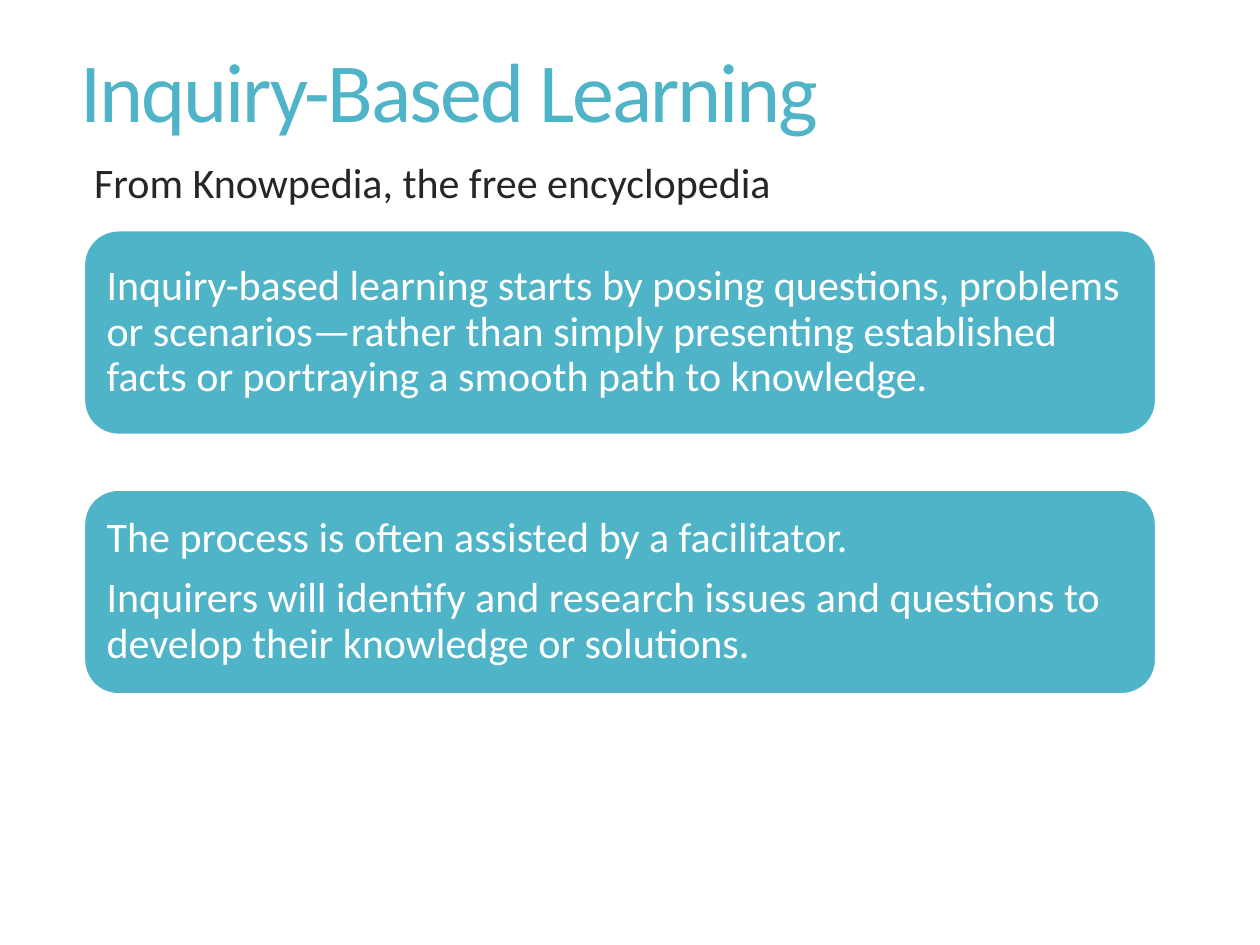
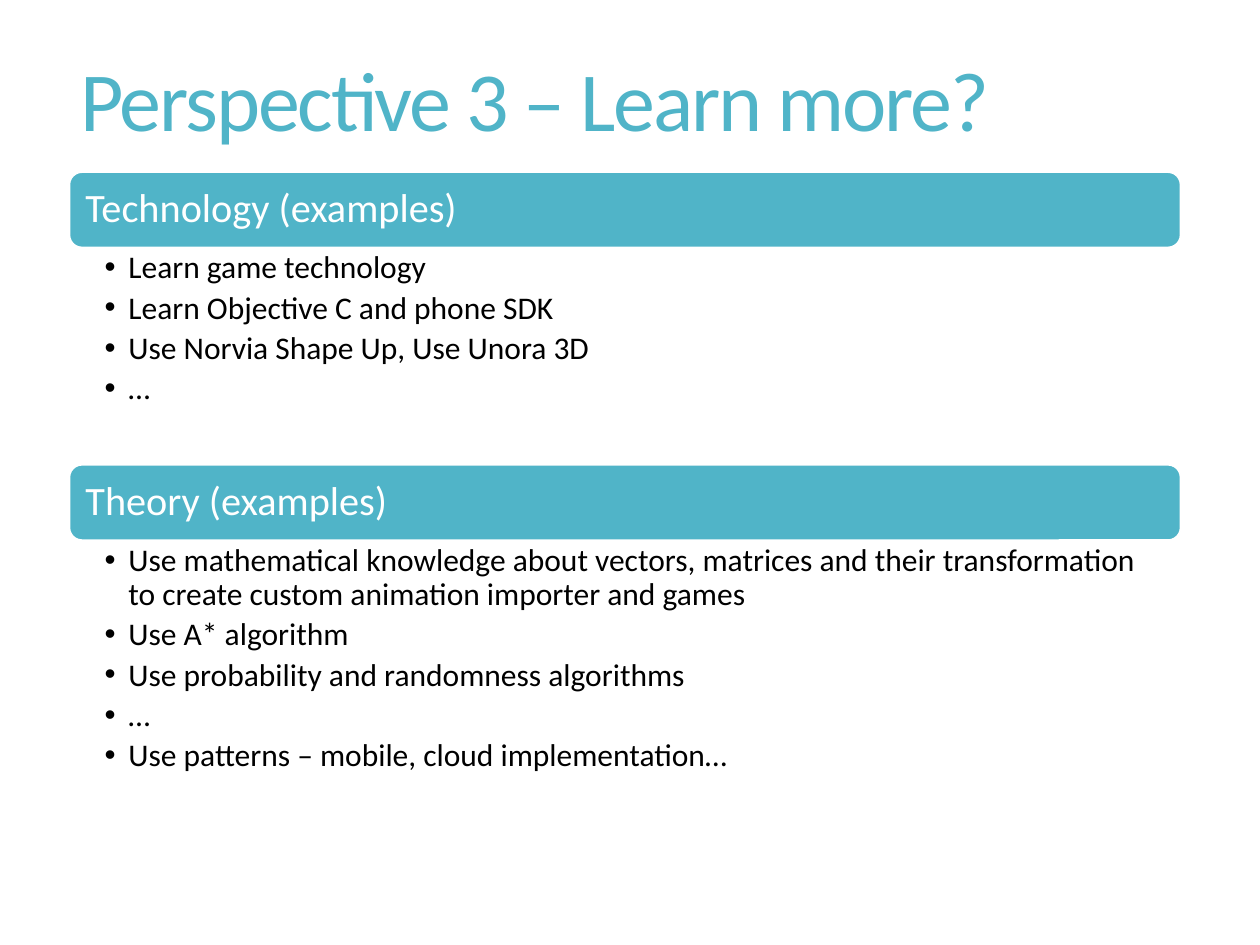
from lxml import etree
from pptx import Presentation
from pptx.dml.color import RGBColor
from pptx.enum.shapes import MSO_SHAPE
from pptx.enum.text import MSO_ANCHOR, PP_ALIGN
from pptx.oxml.ns import qn
from pptx.util import Cm, Pt

ROUNDED = MSO_SHAPE.ROUNDED_RECTANGLE
TOP, MIDDLE = MSO_ANCHOR.TOP, MSO_ANCHOR.MIDDLE
LEFT = PP_ALIGN.LEFT

FONT = "Calibri"
TEAL, WHITE, BLACK, DARK = "50B4C8", "FFFFFF", "000000", "262626"
BULLET_INDENT = Cm(0.48)


def write(sp, lines, size, color, anchor=TOP, spacing=0.9, after=0,
          insets=(0.25, 0.25, 0.25, 0.25), tracking=None, bullets=False):
    """Fill a shape with paragraphs; insets are left, top, right, bottom in cm."""
    tf = sp.text_frame
    tf.word_wrap = True
    tf.vertical_anchor = anchor
    tf.margin_left, tf.margin_top, tf.margin_right, tf.margin_bottom = map(Cm, insets)
    for i, line in enumerate(lines):
        p = tf.add_paragraph() if i else tf.paragraphs[0]
        p.alignment = LEFT
        p.line_spacing = spacing
        p.space_after = Pt(after)
        r = p.add_run()
        r.text = line
        r.font.name = FONT
        r.font.size = Pt(size)
        r.font.color.rgb = RGBColor.from_string(color)
        if tracking:
            r.font._element.set("spc", str(round(tracking * 100)))
        if bullets:
            pPr = p._p.get_or_add_pPr()
            pPr.set("marL", str(BULLET_INDENT))
            pPr.set("indent", str(-BULLET_INDENT))
            etree.SubElement(pPr, qn("a:buFont")).set("typeface", "Arial")
            etree.SubElement(pPr, qn("a:buChar")).set("char", "•")


def add_band(s, left, top, width, height, lines, size):
    """Add a rounded teal band with white text."""
    sp = s.shapes.add_shape(ROUNDED, Cm(left), Cm(top), Cm(width), Cm(height))
    sp.shadow.inherit = False
    sp.fill.solid()
    sp.fill.fore_color.rgb = RGBColor.from_string(TEAL)
    sp.line.color.rgb = RGBColor.from_string(WHITE)
    sp.line.width = Pt(1)
    write(sp, lines, size, WHITE, anchor=MIDDLE, after=0.35 * size)


prs = Presentation()
prs.slide_width, prs.slide_height = Cm(25.4), Cm(19.05)

# Slides with their titles
slides = []
for title, top in [("Inquiry-Based Learning", -0.38),
                   ("Perspective 3 – Learn more?", -0.2)]:
    s = prs.slides.add_slide(prs.slide_layouts[6])
    sp = s.shapes.add_textbox(Cm(1.37), Cm(top), Cm(22.45), Cm(4.6))
    write(sp, [title], 48, TEAL, anchor=MIDDLE, tracking=-1.2,
          insets=(0.25, 0.13, 0.25, 0.13))
    slides.append(s)
learning, perspective = slides

# Inquiry-Based Learning
sp = learning.shapes.add_textbox(Cm(1.4), Cm(3.18), Cm(22.4), Cm(10.46))
write(sp, ["From Knowpedia, the free encyclopedia"], 24, DARK, spacing=0.85,
      insets=(0.5, 0.13, 0.25, 0.13))

statements = [
    ["Inquiry-based learning starts by posing questions, problems or scenarios—rather "
     "than simply presenting established facts or portraying a smooth path to knowledge."],
    ["The process is often assisted by a facilitator.",
     "Inquirers will identify and research issues and questions to develop their "
     "knowledge or solutions."],
]
for i, lines in enumerate(statements):
    add_band(learning, 1.7, 4.65 + i * 5.23, 21.6, 4.11, lines, 24)

# Perspective 3: headings with a list under each, stacked without gaps
sections = [
    ("Technology (examples)", 4.38,
     ["Learn game technology",
      "Learn Objective C and phone SDK",
      "Use Norvia Shape Up, Use Unora 3D",
      "…"]),
    ("Theory (examples)", 5.03,
     ["Use mathematical knowledge about vectors, matrices and their transformation "
      "to create custom animation importer and games",
      "Use A* algorithm",
      "Use probability and randomness algorithms",
      "…",
      "Use patterns – mobile, cloud implementation…"]),
]
top, heading_height = 3.47, 1.52
for heading, list_height, items in sections:
    add_band(perspective, 1.4, top, 22.4, heading_height, [heading], 23)
    top += heading_height
    sp = perspective.shapes.add_textbox(Cm(1.4), Cm(top), Cm(22.4), Cm(list_height))
    write(sp, items, 18, BLACK, after=3.6, insets=(0.71, 0.08, 0.46, 0.08), bullets=True)
    top += list_height

prs.save("out.pptx")
